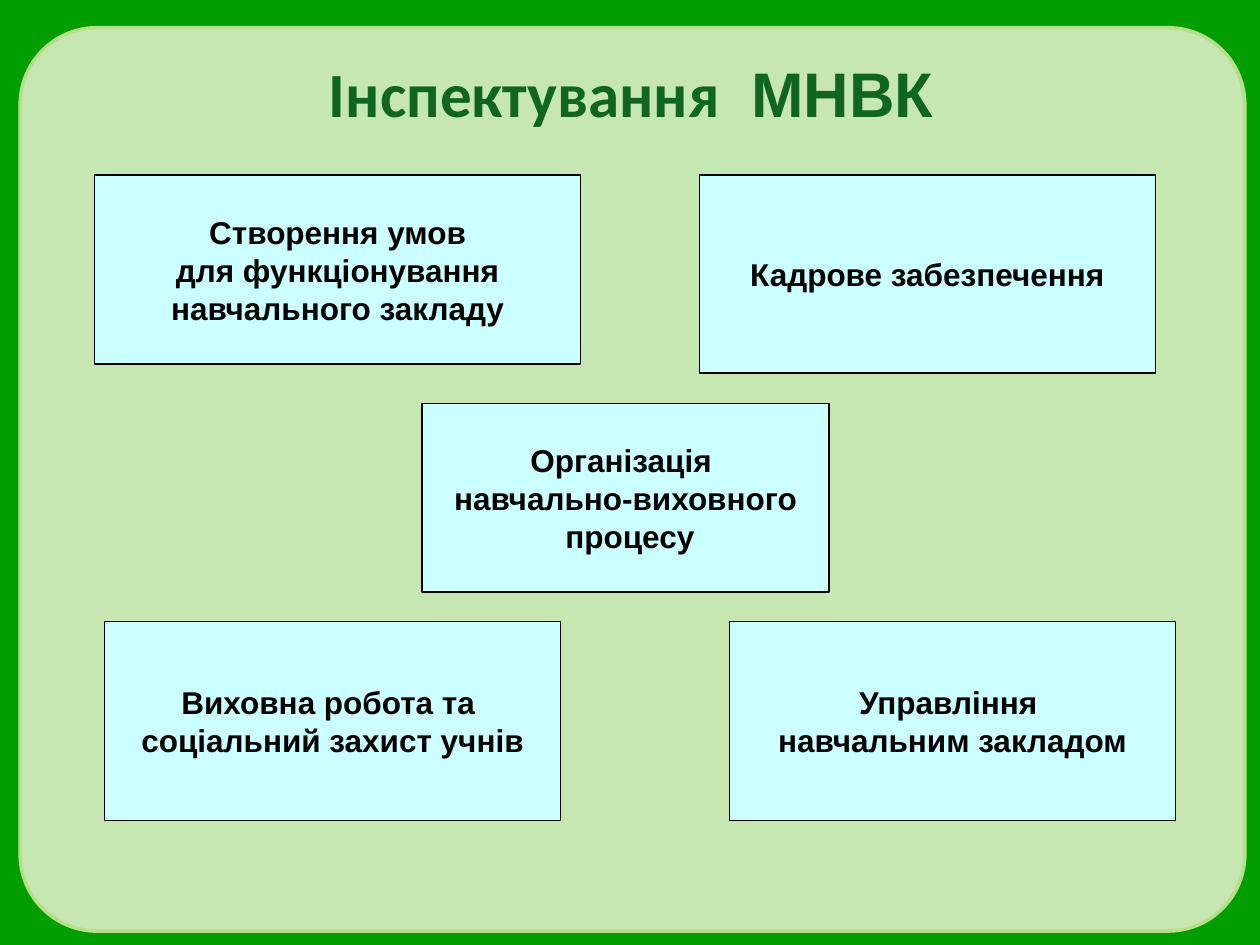
"""Build the school inspection overview slide."""
from dataclasses import dataclass

from lxml import etree
from pptx import Presentation
from pptx.dml.color import RGBColor
from pptx.enum import shapes, text
from pptx.oxml.ns import qn
from pptx.util import Inches, Pt


@dataclass(frozen=True)
class Theme:
    backdrop: str = "009E00"
    panel: str = "DCF0C6"
    panel_edge: str = "B6DF89"
    panel_opacity: int = 90
    heading: str = "106620"
    topic: str = "CCFFFF"
    ink: str = "000000"
    heading_font: str = "Calibri"
    body_font: str = "Arial"
    heading_size: int = 36
    body_size: int = 18


THEME = Theme()
PANEL = (0.16, 0.22, 9.72, 7.17)
PANEL_ROUNDING = 0.085
HEADING_PLACE = (0.51, 0.21, 9, 1.04)
HEADING = [[("Інспектування ", THEME.heading_font), (" МНВК", THEME.body_font)]]
ROW_TOPS = (1.39, 3.2, 4.93)
TOPICS = [
    (0, 0.75, 3.86, 1.5, ["Створення умов", " для функціонування ", "навчального закладу"]),
    (0, 5.55, 3.62, 1.57, ["Кадрове забезпечення"]),
    (1, 3.35, 3.23, 1.5, ["Організація ", "навчально-виховного", " процесу"]),
    (2, 0.83, 3.62, 1.58, ["Виховна робота та ", "соціальний захист учнів"]),
    (2, 5.79, 3.54, 1.58, ["Управління ", "навчальним закладом"]),
]


def add_panel(slide, kind, place, fill, edge, weight):
    panel = slide.shapes.add_shape(kind, *map(Inches, place))
    panel.shadow.inherit = False
    panel.fill.solid()
    panel.fill.fore_color.rgb = RGBColor.from_string(fill)
    panel.line.color.rgb = RGBColor.from_string(edge)
    panel.line.width = Pt(weight)
    return panel


def write(frame, lines, *, size, color, wrap):
    frame.word_wrap = wrap
    frame.vertical_anchor = text.MSO_ANCHOR.MIDDLE
    for index, line in enumerate(lines):
        paragraph = frame.add_paragraph() if index else frame.paragraphs[0]
        paragraph.alignment = text.PP_ALIGN.CENTER
        for words, font in line:
            run = paragraph.add_run()
            run.text = words
            run.font.name = font
            run.font.size = Pt(size)
            run.font.bold = True
            run.font.color.rgb = RGBColor.from_string(color)


def main():
    deck = Presentation()
    deck.slide_width, deck.slide_height = Inches(10), Inches(7.5)
    slide = deck.slides.add_slide(deck.slide_layouts[6])
    slide.background.fill.solid()
    slide.background.fill.fore_color.rgb = RGBColor.from_string(THEME.backdrop)

    panel = add_panel(slide, shapes.MSO_SHAPE.ROUNDED_RECTANGLE, PANEL,
                      THEME.panel, THEME.panel_edge, 2)
    panel.adjustments[0] = PANEL_ROUNDING
    tint = panel.fill._xPr.find(qn("a:solidFill"))[0]
    etree.SubElement(tint, qn("a:alpha"), val=str(THEME.panel_opacity * 1000))

    heading = slide.shapes.add_textbox(*map(Inches, HEADING_PLACE))
    write(heading.text_frame, HEADING, size=THEME.heading_size,
          color=THEME.heading, wrap=True)

    for row, left, width, height, lines in TOPICS:
        topic = add_panel(slide, shapes.MSO_SHAPE.RECTANGLE,
                          (left, ROW_TOPS[row], width, height),
                          THEME.topic, THEME.ink, 0.75)
        write(topic.text_frame, [[(line, THEME.body_font)] for line in lines],
              size=THEME.body_size, color=THEME.ink, wrap=False)

    deck.save("out.pptx")


if __name__ == "__main__":
    main()
